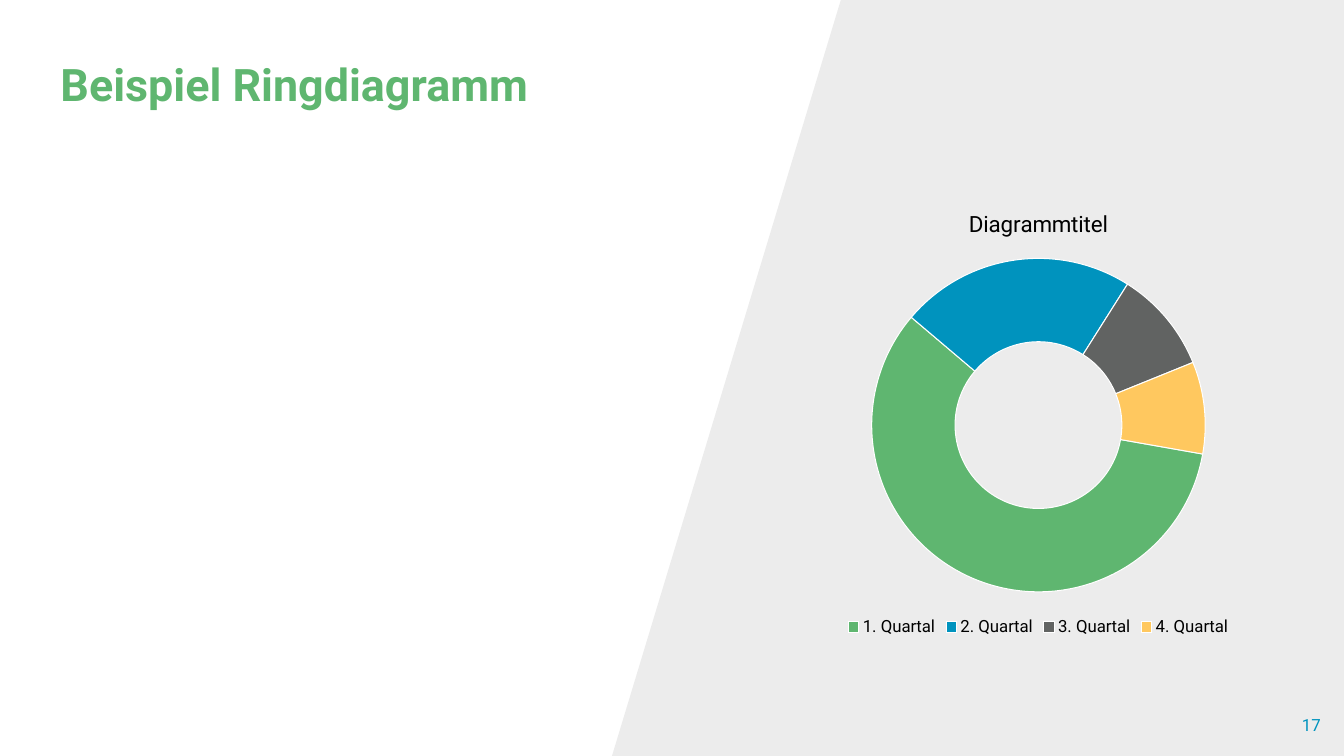
from pptx import Presentation
from pptx.chart.data import CategoryChartData
from pptx.dml.color import RGBColor
from pptx.enum.chart import XL_CHART_TYPE as ChartType, XL_LEGEND_POSITION as LegendPosition
from pptx.enum.text import MSO_ANCHOR as Anchor, PP_ALIGN as Align
from pptx.util import Inches, Pt

COLORS = {
    "green": "5FB670",
    "blue": "0093BE",
    "gray": "616362",
    "yellow": "FFC85F",
    "panel": "ECECEC",
    "black": "000000",
    "white": "FFFFFF",
}
QUARTERS = {
    "1. Quartal": (59, "green"),
    "2. Quartal": (23, "blue"),
    "3. Quartal": (10, "gray"),
    "4. Quartal": (9, "yellow"),
}


class SlideBuilder:
    """Hold the text style and the current slide, and add its elements."""

    def __init__(self, presentation, font_name):
        self.font_name = font_name
        self.slide = presentation.slides.add_slide(presentation.slide_layouts[5])

    def color(self, name):
        """Return a palette colour."""
        return RGBColor.from_string(COLORS[name])

    def style(self, font, size, color, bold=False):
        """Apply the house font."""
        font.name = self.font_name
        font.size = Pt(size)
        font.bold = bold
        font.color.rgb = self.color(color)

    def panel(self, points, color):
        """Draw a filled polygon behind the other elements."""
        corners = [(Inches(x), Inches(y)) for x, y in points]
        builder = self.slide.shapes.build_freeform(*corners[0])
        builder.add_line_segments(corners[1:], close=True)
        shape = builder.convert_to_shape()
        shape.shadow.inherit = False
        shape.fill.solid()
        shape.fill.fore_color.rgb = self.color(color)
        shape.line.fill.background()
        self.slide.shapes[0].element.addprevious(shape.element)

    def text(self, shape, text, anchor, align):
        """Fill a shape with one paragraph without insets and return it."""
        frame = shape.text_frame
        frame.word_wrap = True
        frame.vertical_anchor = anchor
        frame.margin_left = frame.margin_right = 0
        frame.margin_top = frame.margin_bottom = 0
        paragraph = frame.paragraphs[0]
        paragraph.text = text
        paragraph.alignment = align
        return paragraph

    def title(self, text, left, top, width, height):
        """Place and format the title placeholder."""
        shape = self.slide.shapes.title
        shape.left, shape.top = Inches(left), Inches(top)
        shape.width, shape.height = Inches(width), Inches(height)
        paragraph = self.text(shape, text, Anchor.BOTTOM, Align.LEFT)
        paragraph.line_spacing = 0.85
        self.style(paragraph.font, 32, "green", bold=True)

    def page_number(self, text, left, top, width, height):
        """Add the page number."""
        shape = self.slide.shapes.add_textbox(*map(Inches, (left, top, width, height)))
        paragraph = self.text(shape, text, Anchor.MIDDLE, Align.RIGHT)
        self.style(paragraph.font, 12, "blue")

    def doughnut(self, title, quarters, left, top, width, height):
        """Add a doughnut chart with a title and a legend below."""
        data = CategoryChartData()
        data.categories = list(quarters)
        data.add_series("Series 1", [value for value, _ in quarters.values()])
        chart = self.slide.shapes.add_chart(
            ChartType.DOUGHNUT, *map(Inches, (left, top, width, height)), data
        ).chart
        self.style(chart.font, 10, "black")

        chart.has_title = True
        paragraph = chart.chart_title.text_frame.paragraphs[0]
        paragraph.text = title
        self.style(paragraph.font, 16, "black")
        chart.chart_title.include_in_layout = False

        chart.has_legend = True
        chart.legend.position = LegendPosition.BOTTOM
        chart.legend.include_in_layout = False
        self.style(chart.legend.font, 12, "black")

        plot = chart.plots[0]
        plot.vary_by_categories = True
        for tag, value in (("firstSliceAng", 100), ("holeSize", 46)):
            chart.element.xpath(f".//c:{tag}")[0].set("val", str(value))
        for index, (_, color) in enumerate(quarters.values()):
            ring_part = plot.series[0].points[index].format
            ring_part.fill.solid()
            ring_part.fill.fore_color.rgb = self.color(color)
            ring_part.line.color.rgb = self.color("white")
            ring_part.line.width = Pt(0.75)


def main():
    """Build and save the slide."""
    presentation = Presentation()
    presentation.slide_width = Inches(13.33)
    presentation.slide_height = Inches(7.5)
    builder = SlideBuilder(presentation, "Roboto")
    builder.panel([(8.34, 0), (13.33, 0), (13.33, 7.5), (6.07, 7.5)], "panel")
    builder.title("Beispiel Ringdiagramm", 0.6, 0.63, 6.76, 0.47)
    builder.page_number("17", 12.6, 7.09, 0.5, 0.2)
    builder.doughnut("Diagrammtitel", QUARTERS, 8.12, 1.9, 4.36, 4.46)
    presentation.save("out.pptx")


if __name__ == "__main__":
    main()
